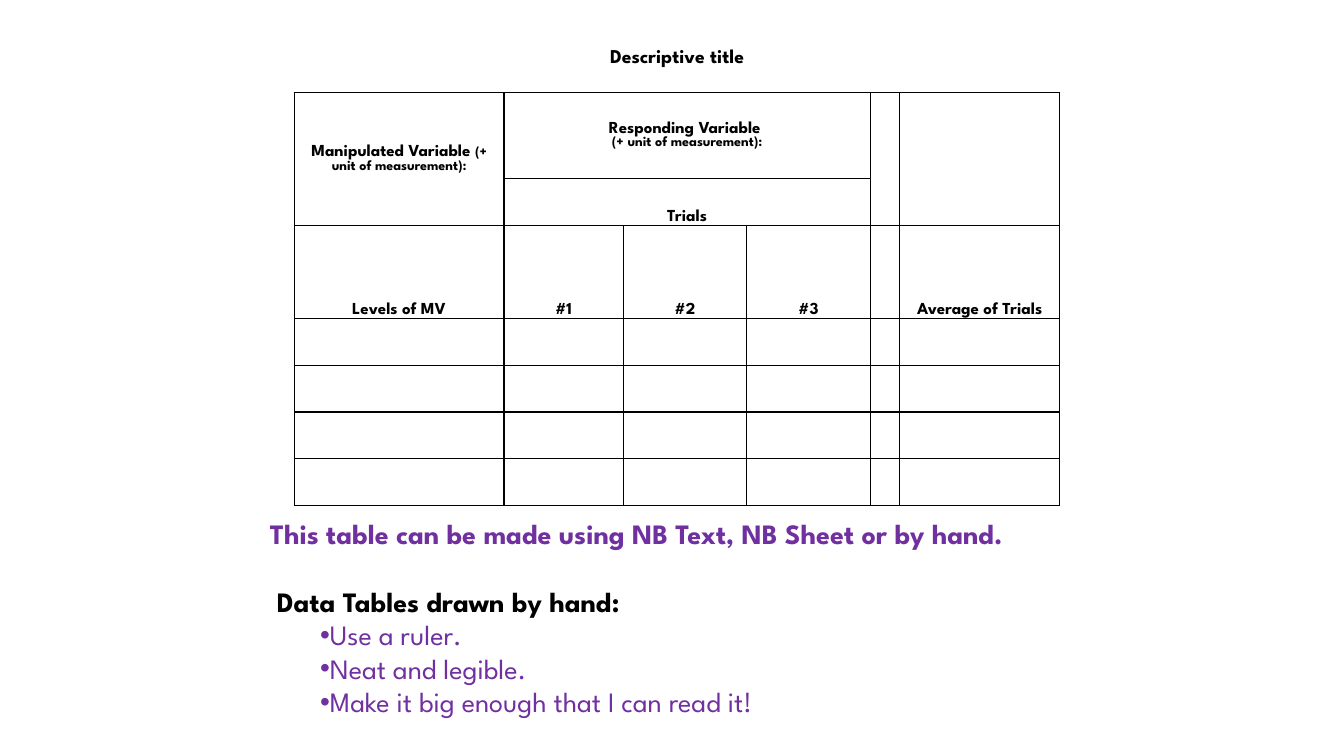
"""Builds a slide showing the layout of a data table and advice on drawing it."""
from lxml.etree import SubElement
from pptx import Presentation
from pptx.dml.color import RGBColor
from pptx.enum.text import MSO_ANCHOR, PP_ALIGN
from pptx.oxml.ns import qn
from pptx.util import Cm, Pt


def add_run(paragraph, text, size, color, bold=True):
    run = paragraph.add_run()
    run.text = text
    formats = {"name": "League Spartan", "size": Pt(size), "bold": bold}
    for name, value in formats.items():
        setattr(run.font, name, value)
    run.font.color.rgb = RGBColor.from_string(color)


def add_border(cell, side, color=None):
    line = SubElement(cell._tc.get_or_add_tcPr(), qn(f"a:ln{side}"), w=str(Pt(1)))
    if color:
        SubElement(SubElement(line, qn("a:solidFill")), qn("a:srgbClr"), val=color)
    else:
        SubElement(line, qn("a:noFill"))


BLACK, PURPLE = "000000", "7030A0"
COLUMN_WIDTHS = [5.28, 3.01, 3.11, 3.11, 0.74, 4.04]
ROW_HEIGHTS = [1.7, 2.16, 1.18, 2.34] + [1.18] * 4
MERGES = [(0, 0, 0, 5), (1, 0, 2, 0), (1, 1, 1, 3),
          (1, 4, 2, 4), (1, 5, 2, 5), (2, 1, 2, 3)]
UNIT = ("(+ unit of measurement):", 10)
LABELS = {
    (0, 0): [[("Descriptive title", 14)]],
    (1, 0): [[("Manipulated Variable ", 12), UNIT]],
    (1, 1): [[("Responding Variable ", 12)], [UNIT]],
    (2, 1): [[("Trials", 12)]],
    (3, 0): [[("Levels of MV", 12)]],
    (3, 1): [[("#1", 12)]],
    (3, 2): [[("#2", 12)]],
    (3, 3): [[("#3", 12)]],
    (3, 5): [[("Average of Trials", 12)]],
}

presentation = Presentation()
presentation.slide_width = Cm(33.87)
presentation.slide_height = Cm(19.05)
slide = presentation.slides.add_slide(presentation.slide_layouts[6])

table = slide.shapes.add_table(
    len(ROW_HEIGHTS), len(COLUMN_WIDTHS), Cm(7.42), Cm(0.64),
    Cm(sum(COLUMN_WIDTHS)), Cm(sum(ROW_HEIGHTS))).table
table.first_row = False
table.horz_banding = False
for column, width in zip(table.columns, COLUMN_WIDTHS):
    column.width = Cm(width)
for row, height in zip(table.rows, ROW_HEIGHTS):
    row.height = Cm(height)
for top, left, bottom, right in MERGES:
    table.cell(top, left).merge(table.cell(bottom, right))

for row_index in range(len(ROW_HEIGHTS)):
    for column_index in range(len(COLUMN_WIDTHS)):
        cell = table.cell(row_index, column_index)
        cell_formats = {
            "margin_left": Cm(0.18), "margin_right": Cm(0.18),
            "margin_top": 0, "margin_bottom": 0,
            "vertical_anchor": MSO_ANCHOR.MIDDLE if row_index < 2 else MSO_ANCHOR.BOTTOM,
        }
        for name, value in cell_formats.items():
            setattr(cell, name, value)
        for side in "LRTB":
            add_border(cell, side, BLACK if row_index or side == "B" else None)
        cell.fill.background()
        for index, runs in enumerate(LABELS.get((row_index, column_index), [])):
            frame = cell.text_frame
            paragraph = frame.add_paragraph() if index else frame.paragraphs[0]
            paragraph.alignment = PP_ALIGN.CENTER
            for text, size in runs:
                add_run(paragraph, text, size, BLACK)

advice = slide.shapes.add_textbox(Cm(6.55), Cm(12.9), Cm(22.02), Cm(5.38)).text_frame
advice.word_wrap = True
add_run(advice.paragraphs[0],
        "This table can be made using NB Text, NB Sheet or by hand.", 20, PURPLE)

heading = advice.add_paragraph()
heading.space_before = Pt(24)
heading._p.get_or_add_pPr().set("marL", str(Cm(0.18)))
add_run(heading, "Data Tables drawn by hand:", 20, BLACK)

for tip in ["Use a ruler.", "Neat and legible.", "Make it big enough that I can read it!"]:
    paragraph = advice.add_paragraph()
    paragraph.level = 1
    properties = paragraph._p.get_or_add_pPr()
    properties.set("marL", str(Cm(1.27)))
    properties.set("indent", "0")
    SubElement(properties, qn("a:buFont"), typeface="Arial")
    SubElement(properties, qn("a:buChar"), char="•")
    add_run(paragraph, tip, 20, PURPLE, bold=False)

presentation.save("out.pptx")
